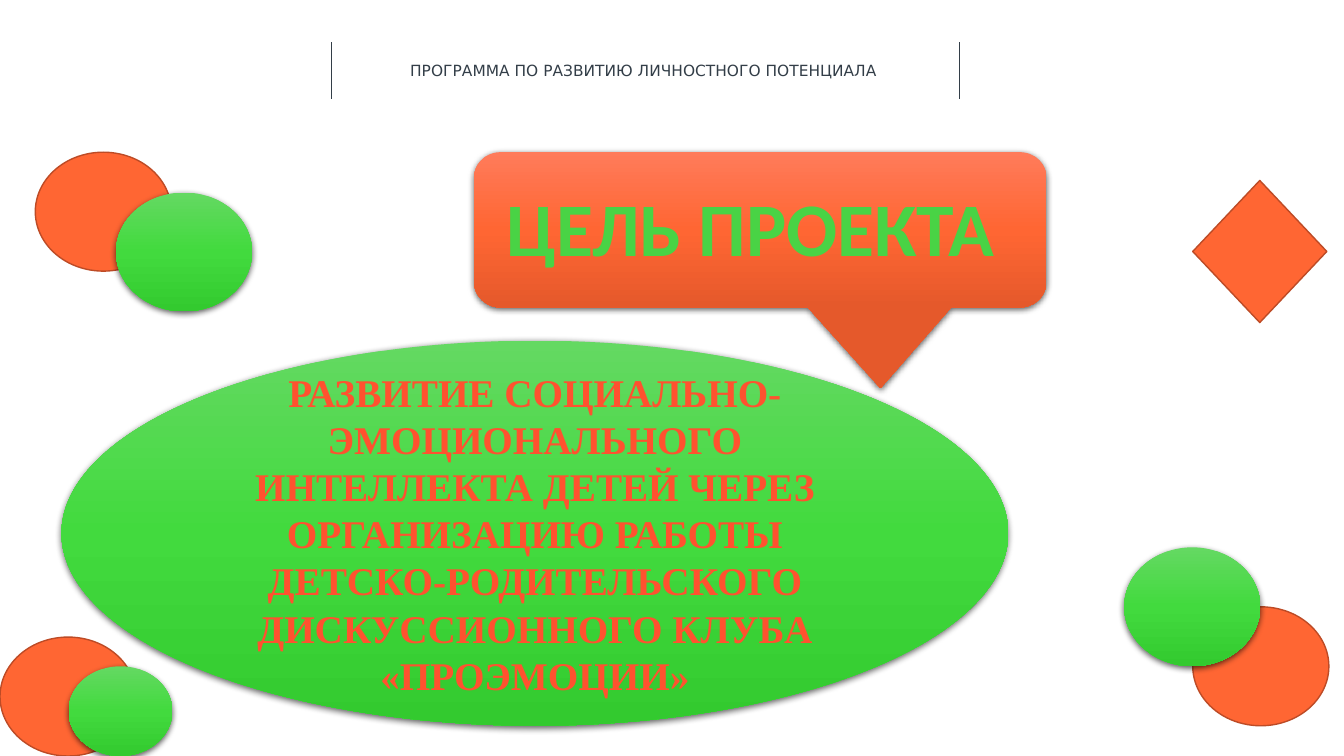
from pptx import Presentation
from pptx.dml.color import RGBColor
from pptx.enum.shapes import MSO_CONNECTOR, MSO_SHAPE
from pptx.enum.text import MSO_ANCHOR, MSO_AUTO_SIZE, PP_ALIGN
from pptx.oxml import parse_xml
from pptx.oxml.ns import nsdecls, qn
from pptx.util import Inches, Pt

CENTER, LEFT = PP_ALIGN.CENTER, PP_ALIGN.LEFT
MIDDLE = MSO_ANCHOR.MIDDLE
FIT_SHAPE = MSO_AUTO_SIZE.SHAPE_TO_FIT_TEXT
STRAIGHT = MSO_CONNECTOR.STRAIGHT
ELLIPSE, DIAMOND = MSO_SHAPE.OVAL, MSO_SHAPE.DIAMOND
CIRCLE = MSO_SHAPE.FLOWCHART_CONNECTOR
CALLOUT = MSO_SHAPE.ROUNDED_RECTANGULAR_CALLOUT

SLATE = RGBColor(0x33, 0x3E, 0x48)
ORANGE = RGBColor(0xFF, 0x66, 0x33)
RUST = RGBColor(0xBD, 0x4B, 0x26)
GREEN = RGBColor(0x49, 0xD3, 0x45)
RED = RGBColor(0xFF, 0x52, 0x2F)
OFF_WHITE = RGBColor(0xFF, 0xFE, 0xFE)
BLACK = RGBColor(0, 0, 0)

ORANGE_STOPS = [(0, RGBColor(0xFF, 0x7B, 0x5A)), (50, ORANGE),
                (100, RGBColor(0xE5, 0x59, 0x2B))]
GREEN_STOPS = [(0, RGBColor(0x64, 0xD9, 0x62)), (50, RGBColor(0x42, 0xDA, 0x3E)),
               (100, RGBColor(0x33, 0xCA, 0x2F))]
RED_STOPS = [(0, RGBColor(0xFF, 0x78, 0x61)), (49, RED),
             (50, RGBColor(0xED, 0x48, 0x11)), (92, RGBColor(0xCC, 0x44, 0x17)),
             (100, RGBColor(0xC8, 0x43, 0x16))]

GOAL = ("РАЗВИТИЕ СОЦИАЛЬНО-ЭМОЦИОНАЛЬНОГО ИНТЕЛЛЕКТА ДЕТЕЙ ЧЕРЕЗ "
        "ОРГАНИЗАЦИЮ РАБОТЫ ДЕТСКО-РОДИТЕЛЬСКОГО ДИСКУССИОННОГО КЛУБА "
        "«ПРОЭМОЦИИ»")
DISC = (1.35, 1.18)


def vertical_gradient(stops):
    marks = "".join(f'<a:gs pos="{position * 1000}"><a:srgbClr val="{color}"/></a:gs>'
                    for position, color in stops)
    return parse_xml(f'<a:gradFill {nsdecls("a")} rotWithShape="1"><a:gsLst>{marks}'
                     '</a:gsLst><a:lin ang="5400000" scaled="0"/></a:gradFill>')


class SlideBuilder:
    def __init__(self, slide):
        self.shapes = slide.shapes

    def divider(self, x, top, bottom):
        line = self.shapes.add_connector(
            STRAIGHT, Inches(x), Inches(top), Inches(x), Inches(bottom))
        line.line.color.rgb = SLATE
        line.line.width = Pt(0.5)
        line._element.spPr.append(parse_xml(f'<a:effectLst {nsdecls("a")}/>'))

    def shape(self, kind, left, top, width, height):
        shape = self.shapes.add_shape(
            kind, Inches(left), Inches(top), Inches(width), Inches(height))
        shape.shadow.inherit = False
        return shape

    def flat(self, kind, left, top, width, height):
        """Add an orange shape with a thin outline."""
        shape = self.shape(kind, left, top, width, height)
        shape.fill.solid()
        shape.fill.fore_color.rgb = ORANGE
        shape.line.color.rgb = RUST
        shape.line.width = Pt(1)

    def glossy(self, kind, left, top, width, height, stops=GREEN_STOPS):
        """Add a shape with a gradient, a soft shadow and no outline."""
        shape = self.shape(kind, left, top, width, height)
        shape.line.fill.background()
        properties = shape._element.spPr
        properties.find(qn("a:prstGeom")).addnext(vertical_gradient(stops))
        properties.find(qn("a:effectLst")).append(parse_xml(
            f'<a:outerShdw {nsdecls("a")} blurRad="{Pt(4.5)}" dist="{Pt(1.5)}" '
            f'dir="5400000" algn="ctr" rotWithShape="0"><a:srgbClr val="{BLACK}">'
            '<a:alpha val="63000"/></a:srgbClr></a:outerShdw>'))
        return shape

    def text_box(self, left, top, width, height, wrap):
        box = self.shapes.add_textbox(
            Inches(left), Inches(top), Inches(width), Inches(height))
        box.text_frame.word_wrap = wrap
        box.text_frame.auto_size = FIT_SHAPE
        return box

    def label(self, shape, text, font, size, color, bold=False, align=CENTER):
        """Fill in one paragraph and return the properties of its run."""
        paragraph = shape.text_frame.paragraphs[0]
        paragraph.alignment = align
        run = paragraph.add_run()
        run.text = text
        paragraph.font.name = font
        paragraph.font.size = Pt(size)
        paragraph.font.bold = bold
        paragraph.font.color.rgb = color
        return run._r.get_or_add_rPr()


def main():
    presentation = Presentation()
    presentation.slide_width = Inches(13.33)
    presentation.slide_height = Inches(7.5)
    builder = SlideBuilder(presentation.slides.add_slide(presentation.slide_layouts[6]))

    for x in (3.29, 9.52):
        builder.divider(x, 0.42, 0.98)
    header = builder.text_box(3.97, 0.56, 4.87, 0.29, wrap=True)
    builder.label(header, "ПРОГРАММА ПО РАЗВИТИЮ ЛИЧНОСТНОГО ПОТЕНЦИАЛА",
                  "DejaVu Sans", 11, SLATE, align=LEFT)

    callout = builder.glossy(CALLOUT, 4.7, 1.51, 5.68, 1.54, ORANGE_STOPS)
    for index, value in enumerate((0.21, 1.02, 0.17)):
        callout.adjustments[index] = value
    title = builder.text_box(4.9, 1.75, 5.09, 1.01, wrap=False)
    title_run = builder.label(title, "ЦЕЛЬ ПРОЕКТА", "Calibri", 54, GREEN, bold=True)
    title_run.append(parse_xml(
        f'<a:ln {nsdecls("a")} w="{Pt(1.5)}"><a:solidFill>'
        f'<a:srgbClr val="{OFF_WHITE}"/></a:solidFill></a:ln>'))

    goal = builder.glossy(ELLIPSE, 0.61, 3.38, 9.39, 3.82)
    goal.text_frame.word_wrap = True
    goal.text_frame.vertical_anchor = MIDDLE
    goal_run = builder.label(goal, GOAL, "Times New Roman", 28, RED, bold=True)
    goal_run.append(vertical_gradient(RED_STOPS))

    builder.flat(CIRCLE, 11.83, 6.02, *DISC)
    builder.glossy(CIRCLE, 11.15, 5.43, *DISC)
    builder.flat(CIRCLE, 0.35, 1.51, *DISC)
    builder.flat(DIAMOND, 11.83, 1.79, 1.33, 1.41)
    builder.flat(CIRCLE, 0, 6.32, *DISC)
    builder.glossy(CIRCLE, 1.15, 1.91, *DISC)
    builder.glossy(CIRCLE, 0.68, 6.61, 1.03, 0.89)

    presentation.save("out.pptx")


if __name__ == "__main__":
    main()
